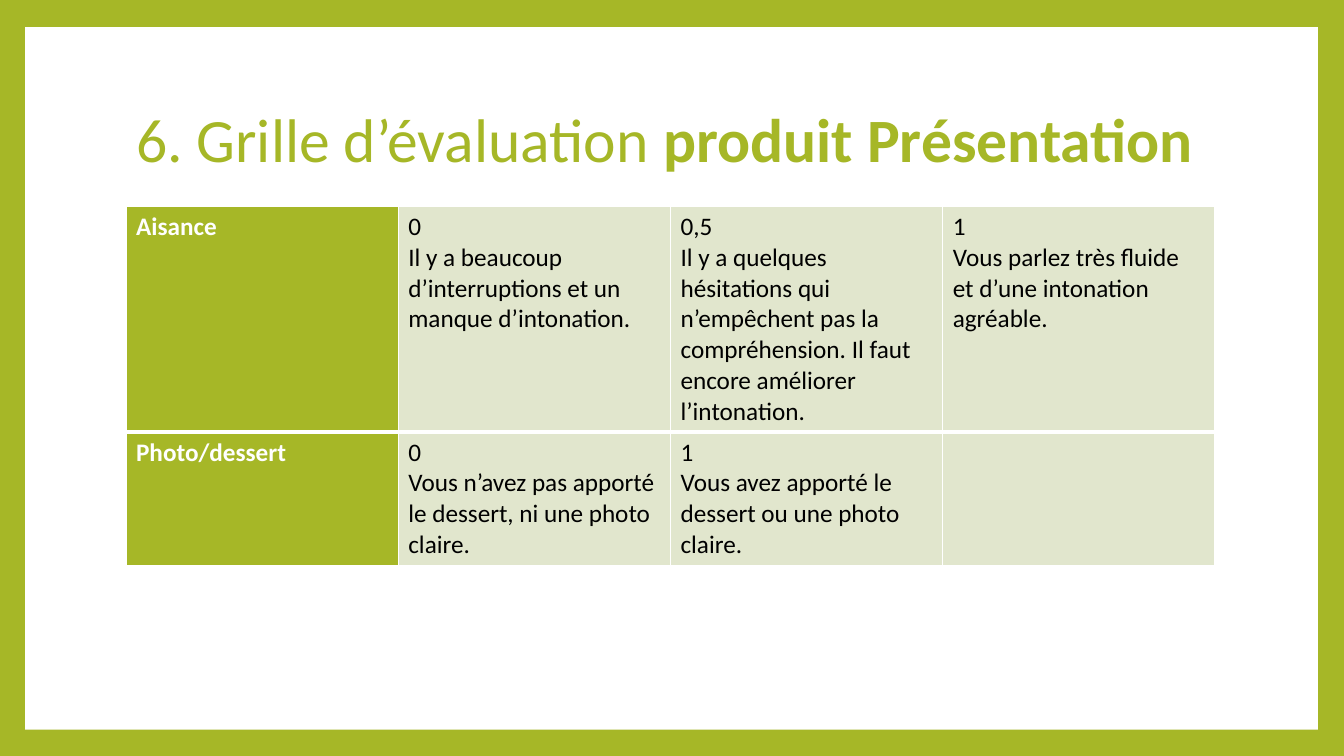
from dataclasses import dataclass

from pptx import Presentation
from pptx import util as u
from pptx.dml.color import RGBColor
from pptx.enum import shapes, text
from pptx.oxml import parse_xml
from pptx.oxml.ns import nsdecls

PX = 9144  # EMU per px, 100 px to the inch
FONT = "Calibri"
COLORS = {"green": "A6B727", "pale": "E1E6CD", "white": "FFFFFF", "black": "000000"}


@dataclass(frozen=True)
class Box:
    left: int
    top: int
    width: int
    height: int

    def emu(self) -> list[u.Emu]:
        return [px(n) for n in (self.left, self.top, self.width, self.height)]


@dataclass(frozen=True)
class Criterion:
    name: str
    height: int
    levels: tuple[tuple[str, ...], ...]


SLIDE = Box(0, 0, 1333, 750)
PANEL = Box(25, 27, 1282, 697)
TITLE = Box(125, 67, 1080, 148)
GRID = Box(125, 205, 1080, 354)
TITLE_RUNS = (("6. Grille d’évaluation ", False), ("produit Présentation", True))
CRITERIA = (
    Criterion("Aisance", 223, (
        ("0", "Il y a beaucoup d’interruptions et un manque d’intonation."),
        ("0,5", "Il y a quelques hésitations qui n’empêchent pas la compréhension. "
                "Il faut encore améliorer l’intonation."),
        ("1", "Vous parlez très fluide et d’une intonation agréable."),
    )),
    Criterion("Photo/dessert", 131, (
        ("0", "Vous n’avez pas apporté le dessert, ni une photo claire."),
        ("1", "Vous avez apporté le dessert ou une photo claire."),
        (),
    )),
)


def px(length: int) -> u.Emu:
    return u.Emu(length * PX)


def color(name: str) -> RGBColor:
    return RGBColor.from_string(COLORS[name])


def paint(fill, name: str) -> None:
    fill.solid()
    fill.fore_color.rgb = color(name)


def style(para, size: int, name: str, bold: bool | None = None) -> None:
    para.font.name = FONT
    para.font.size = u.Pt(size)
    para.font.color.rgb = color(name)
    para.font.bold = bold


def add_panel(page) -> None:
    panel = page.shapes.add_shape(shapes.MSO_SHAPE.RECTANGLE, *PANEL.emu())
    panel.shadow.inherit = False
    paint(panel.fill, "white")
    panel.line.fill.background()
    # Send the panel behind the title
    page.shapes.title._element.addprevious(panel._element)


def write_title(page) -> None:
    box = page.shapes.title
    box.left, box.top, box.width, box.height = TITLE.emu()
    frame = box.text_frame
    frame.word_wrap = True
    frame.auto_size = text.MSO_AUTO_SIZE.NONE
    frame.vertical_anchor = text.MSO_ANCHOR.MIDDLE
    para = frame.paragraphs[0]
    para.alignment = text.PP_ALIGN.LEFT
    para.line_spacing = 0.9
    style(para, 44, "green")
    for words, bold in TITLE_RUNS:
        span = para.add_run()
        span.text = words
        span.font.bold = bold


def set_borders(cell, widths: dict[str, int]) -> None:
    properties = cell._tc.get_or_add_tcPr()
    for index, (side, points) in enumerate(widths.items()):
        properties.insert(index, parse_xml(
            f'<a:ln{side} {nsdecls("a")} w="{u.Pt(points)}"><a:solidFill>'
            f'<a:srgbClr val="{COLORS["white"]}"/></a:solidFill></a:ln{side}>'))


def fill_cell(cell, lines: tuple[str, ...], heading: bool, top: int, bottom: int) -> None:
    paint(cell.fill, "green" if heading else "pale")
    set_borders(cell, {"L": 1, "R": 1, "T": top, "B": bottom})
    cell.text = "\n".join(lines)
    for para in cell.text_frame.paragraphs:
        style(para, 18, "white" if heading else "black", heading)


def add_grid(page) -> None:
    columns = 1 + len(CRITERIA[0].levels)
    table = page.shapes.add_table(len(CRITERIA), columns, *GRID.emu()).table
    for column in table.columns:
        column.width = px(GRID.width // columns)
    for row, criterion in enumerate(CRITERIA):
        table.rows[row].height = px(criterion.height)
        top, bottom = (1, 3) if row == 0 else (3, 1)
        for col, lines in enumerate(((criterion.name,), *criterion.levels)):
            fill_cell(table.cell(row, col), lines, col == 0, top, bottom)


def main() -> None:
    deck = Presentation()
    deck.slide_width, deck.slide_height = px(SLIDE.width), px(SLIDE.height)
    page = deck.slides.add_slide(deck.slide_layouts.get_by_name("Title Only"))

    # Green frame around a white panel
    paint(page.background.fill, "green")
    add_panel(page)

    # Title and evaluation grid
    write_title(page)
    add_grid(page)
    deck.save("out.pptx")


if __name__ == "__main__":
    main()
